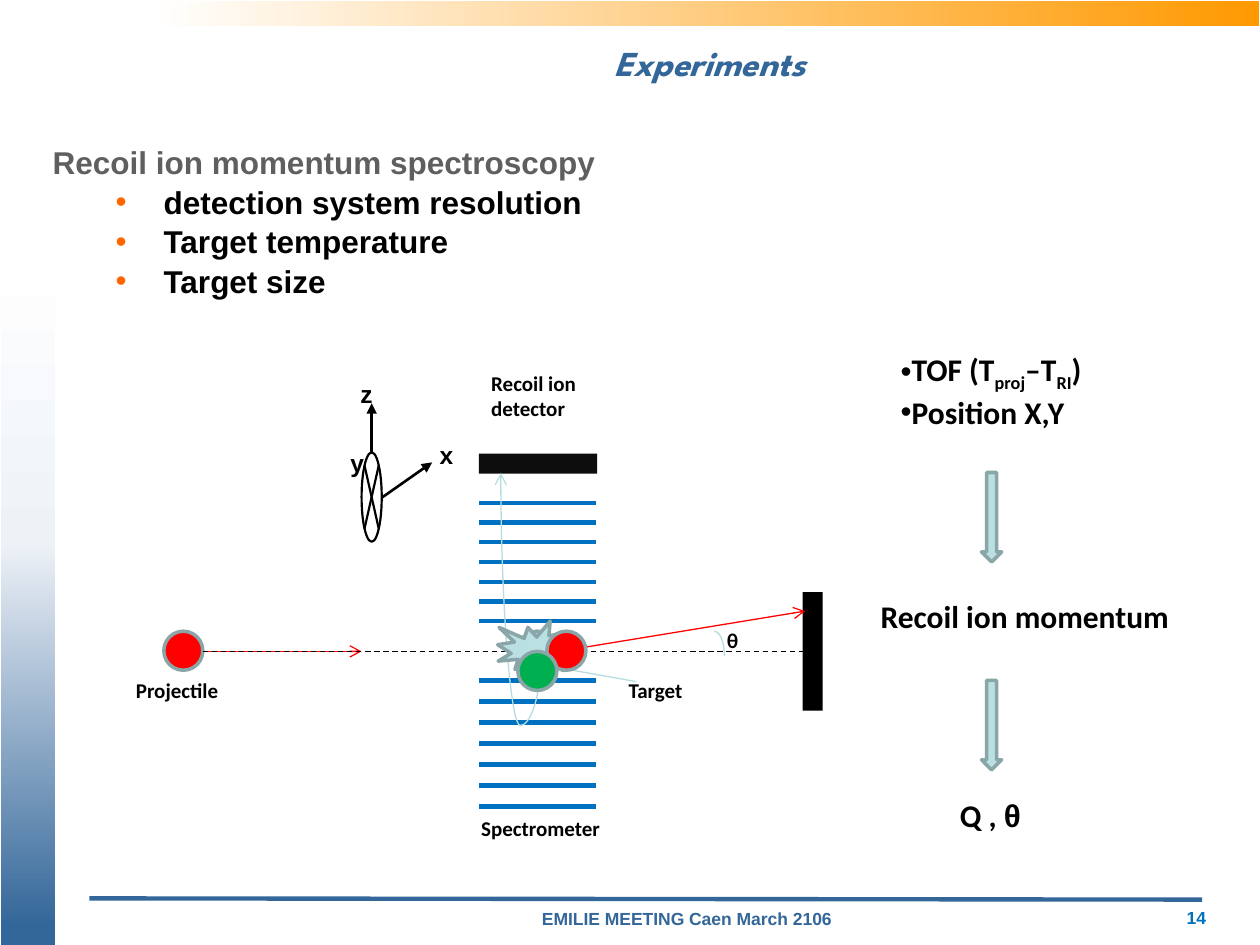
"""Build the slide on recoil ion momentum spectroscopy experiments."""
from copy import deepcopy

from lxml.etree import SubElement
from pptx import Presentation
from pptx.dml.color import RGBColor
from pptx.enum.shapes import MSO_CONNECTOR, MSO_SHAPE
from pptx.enum.text import MSO_AUTO_SIZE, PP_ALIGN
from pptx.oxml.ns import qn
from pptx.util import Inches, Pt

THEME = {
    "white": "FFFFFF", "black": "000000", "plate": "0D0D0D", "navy": "336699",
    "mist": "EEF2F7", "orange": "FF9900", "bullet": "FF6600", "gray": "5F5F5F",
    "red": "FF0000", "green": "00B050", "blue": "0070C0", "pale": "BBE0E3",
    "edge": "8AA6A8", "trace": "B6DCDF",
    "footer": ("Arial", 10), "label": ("Calibri", 12), "axis": ("Arial", 14),
    "body": ("Arial", 18), "result": ("Calibri", 18), "title": ("League Spartan", 20),
}
COLORS = {name: RGBColor.from_string(value) for name, value in THEME.items() if isinstance(value, str)}

presentation = Presentation()
presentation.slide_width, presentation.slide_height = Inches(10), Inches(7.5)
slide = presentation.slides.add_slide(presentation.slide_layouts[6])
CELL = presentation.slide_width // 100


def add_shape(kind, frame, fill=None, line=None, width=2):
    """Add a preset shape placed in grid columns and rows."""
    shape = slide.shapes.add_shape(kind, *[round(CELL * value) for value in frame])
    shape.shadow.inherit = False
    if fill:
        shape.fill.solid()
        shape.fill.fore_color.rgb = COLORS[fill]
    else:
        shape.fill.background()
    if line:
        shape.line.color.rgb = COLORS[line]
        shape.line.width = Pt(width)
    else:
        shape.line.fill.background()
    return shape


def add_line(ends, color, width=0.75, tail=None, dash=None, kind=MSO_CONNECTOR.STRAIGHT):
    """Add a connector between two grid points."""
    connector = slide.shapes.add_connector(kind, *[round(CELL * value) for value in ends])
    connector.line.color.rgb = COLORS[color]
    connector.line.width = Pt(width)
    outline = connector.line._get_or_add_ln()
    for tag, key, value in (("a:prstDash", "val", dash), ("a:tailEnd", "type", tail)):
        if value:
            SubElement(outline, qn(tag)).set(key, value)
    SubElement(connector._element.spPr, qn("a:effectLst"))
    return connector


gradients = [
    ((0.1, 7, 4.3, 68), 270, None, [(0.2, "white"), (0.53, "mist"), (0.98, "navy")]),
    ((12.2, 0, 87.8, 2.1), 0, "white", [(0, "white"), (1, "orange")]),
]
for frame, angle, line, stops in gradients:
    band = add_shape(MSO_SHAPE.RECTANGLE, frame, None, line, 0.75)
    band.fill.gradient()
    band.fill.gradient_angle = angle
    stop_list = band._element.spPr.find(".//" + qn("a:gsLst"))
    for extra in range(len(stops) - len(stop_list)):
        stop_list.append(deepcopy(stop_list[0]))
    for stop, (position, color) in zip(band.fill.gradient_stops, stops):
        stop.position = position
        stop.color.rgb = COLORS[color]

add_line((7.1, 71.3, 95.4, 71.4), "navy", 2.5)

BALL = 3.1
for left, color in ((41.1, "pale"), (13, "red")):
    add_shape(MSO_SHAPE.OVAL, (left, 50.1, BALL, BALL), color, "edge")

for first, last in ((39.9, 49.3), (54, 64)):
    for index in range(7):
        row = first + (last - first) * index / 6
        add_line((47.3, row, 38, row), "blue", 2.5)
add_shape(MSO_SHAPE.RECTANGLE, (38, 36, 9.4, 1.6), "plate")
add_shape(MSO_SHAPE.RECTANGLE, (63.7, 47, 1.6, 9.4), "black")

add_line((16.2, 51.7, 28.7, 51.7), "red", tail="arrow")
add_line((16.1, 51.7, 65.3, 51.7), "black", dash="dash")
add_line((44.4, 51.7, 63.9, 48.5), "red", tail="arrow")
recoil_path = add_line((49.1, 43.8, 33.5, 46.9), "trace", tail="arrow", kind=MSO_CONNECTOR.CURVE)
recoil_path._element.spPr.xfrm.set("rot", "5400000")
guides = recoil_path._element.spPr.prstGeom.get_or_add_avLst()
guide = SubElement(guides, qn("a:gd"))
guide.set("name", "adj1")
guide.set("fmla", "val -28400")

add_shape(MSO_SHAPE.ARC, (55.9, 50.1, 1.6, 3.9), None, "trace", 0.75)
add_line((43.8, 52.9, 50.5, 54.1), "trace")
add_shape(MSO_SHAPE.EXPLOSION1, (39.5, 49.3, 6.2, 4.7), "pale", "edge")
for left, top, color in ((43.4, 50.1, "red"), (41.1, 51.7, "green")):
    add_shape(MSO_SHAPE.OVAL, (left, top, BALL, BALL), color, "edge")
for top in (37.5, 54):
    add_shape(MSO_SHAPE.DOWN_ARROW, (77.9, top, 1.6, 7.1), "pale", "edge")

add_line((30.3, 39.5, 34.3, 36.7), "black", 1.5, "triangle")
add_line((29.5, 35.9, 29.5, 32), "black", 1.5, "triangle")
add_shape(MSO_SHAPE.FLOWCHART_SUMMING_JUNCTION, (28.7, 35.9, 1.6, 7.1), None, "black", 1.25)

AXIS = {"word_wrap": False, "margin_left": Inches(0.06), "margin_right": 0}
CENTER = {"alignment": PP_ALIGN.CENTER}
texts = [
    ((34.9, 71.6, 39.2, 2.7), "footer", "navy", {}, CENTER, ["EMILIE MEETING Caen March 2106"]),
    ((93.2, 71.5, 4.5, 2.7), "footer", "blue", {"word_wrap": False}, {}, ["14"]),
    ((14.6, 2.8, 83.5, 4.4), "title", "navy", {}, CENTER, ["Experiments"]),
    ((3.2, 10.7, 92.9, 13.5), "body", "black", {}, {"line_spacing": 1.05},
     ["Recoil ion momentum spectroscopy", "•detection system resolution",
      "•Target temperature", "•Target size"]),
    ((9.8, 53.3, 10.2, 3), "label", "black", {}, {}, ["Projectile"]),
    ((56.7, 49.3, 4.7, 3), "label", "black", {}, {}, ["θ"]),
    ((48.9, 53.3, 10.2, 3), "label", "black", {}, {}, ["Target"]),
    ((37.2, 64.2, 12.5, 5), "label", "black", {}, {}, ["Spectrometer"]),
    ((38, 28.9, 10.2, 5), "label", "black", {}, {}, ["Recoil ion detector"]),
    ((70.5, 27.3, 21.3, 7), "result", "black", {}, {},
     ["•TOF (T|_proj|–T|_RI|)", "•Position X,Y"]),
    ((68.9, 46.9, 29.1, 4), "result", "black", {}, {}, ["Recoil ion momentum"]),
    ((75.2, 62.7, 7.7, 4), "result", "black", {}, {}, ["Q , |θ"]),
    ((34.3, 34.4, 1.5, 3.4), "axis", "black", AXIS, {}, ["x"]),
    ((27.2, 35.1, 1.5, 3.4), "axis", "black", AXIS, {}, ["y"]),
    ((28, 29.6, 1.5, 3.4), "axis", "black", AXIS, {}, ["z"]),
]
for frame, style, color, frame_format, paragraph_format, lines in texts:
    box = slide.shapes.add_textbox(*[round(CELL * value) for value in frame])
    text_frame = box.text_frame
    for name, value in {"word_wrap": True, "auto_size": MSO_AUTO_SIZE.SHAPE_TO_FIT_TEXT, **frame_format}.items():
        setattr(text_frame, name, value)
    for index, line in enumerate(lines):
        paragraph = text_frame.paragraphs[0] if index == 0 else text_frame.add_paragraph()
        for name, value in paragraph_format.items():
            setattr(paragraph, name, value)
        properties = paragraph._p.get_or_add_pPr()
        if style == "body":
            paragraph.level = min(index, 1)
            properties.set("marL", str(Inches(0.88 if index else 0.38)))
            properties.set("indent", str(Inches(-0.38)))
        if line.startswith("•"):
            if style == "body":
                bullet_color = SubElement(properties, qn("a:buClr"))
                SubElement(bullet_color, qn("a:srgbClr")).set("val", THEME["bullet"])
            SubElement(properties, qn("a:buFont")).set("typeface", "Arial")
            SubElement(properties, qn("a:buChar")).set("char", "•")
        for part in line.removeprefix("•").split("|"):
            run = paragraph.add_run()
            run.text = part.removeprefix("_")
            family, size = THEME[style]
            if part == "θ" and style == "result":
                family = "Arial"
            font_format = {"name": family, "size": Pt(size), "bold": True, "italic": style == "title"}
            for name, value in font_format.items():
                setattr(run.font, name, value)
            run.font.color.rgb = COLORS["gray" if style == "body" and index == 0 else color]
            if part.startswith("_"):
                run._r.get_or_add_rPr().set("baseline", "-25000")

presentation.save("out.pptx")
